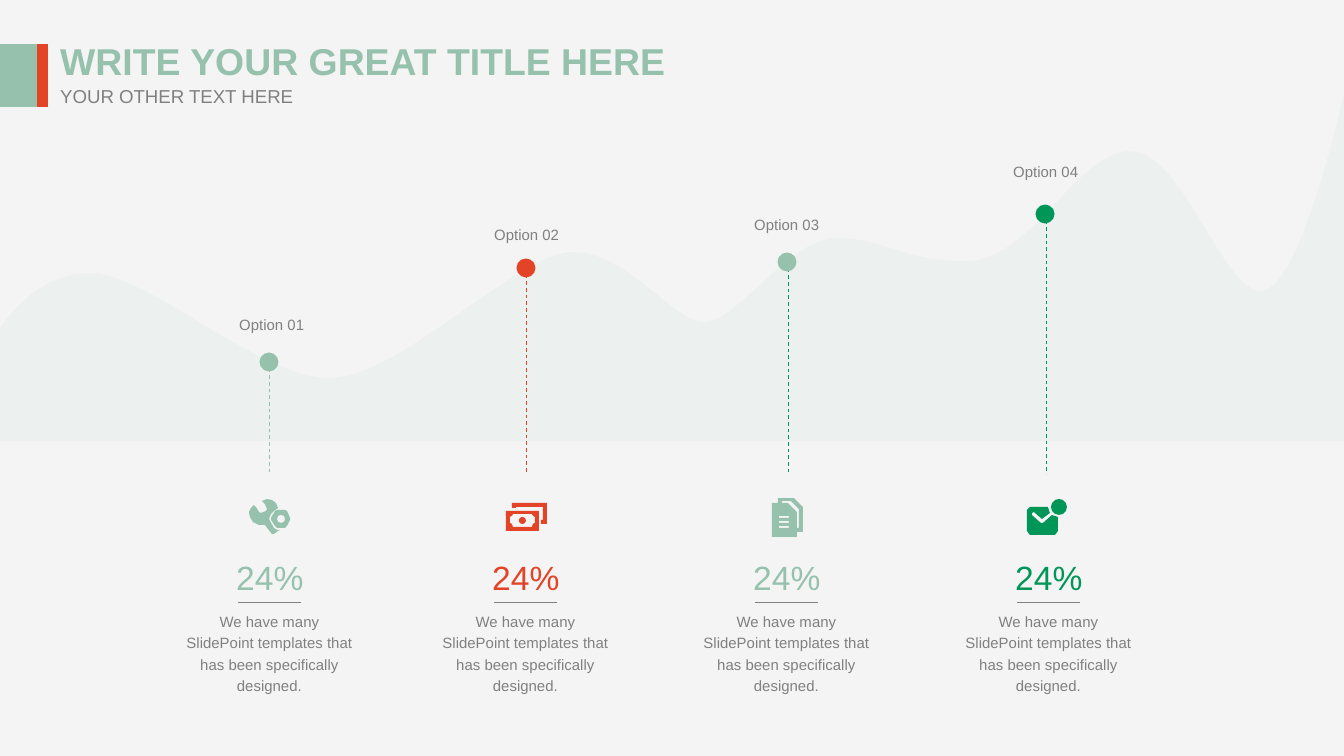
from lxml.etree import SubElement
from pptx import Presentation
from pptx.dml.color import RGBColor
from pptx.enum.dml import MSO_LINE
from pptx.enum.shapes import MSO_CONNECTOR, MSO_SHAPE
from pptx.enum.text import MSO_AUTO_SIZE, PP_ALIGN
from pptx.oxml.ns import qn
from pptx.util import Pt

MINT, RED, GREEN, GRAY, PALE, BACKGROUND = "95C1AD", "E34326", "009658", "808080", "AFD1C2", "F4F4F4"
FONT = "Arial"
WIDTH, HEIGHT = 1344, 756
WAVE_BOTTOM, STEM_BOTTOM, DOT = 441, 474, 19
TITLE, SUBTITLE = "WRITE YOUR GREAT TITLE HERE", "YOUR OTHER TEXT HERE"
COPY = "We have many SlidePoint templates that has been specifically designed."

OPTIONS = [
    {"label": "Option 01", "value": "24%", "color": MINT, "stem": MINT,
     "dot": (269, 362), "label_at": (226, 309), "left": 185},
    {"label": "Option 02", "value": "24%", "color": RED, "stem": RED,
     "dot": (526, 268), "label_at": (481, 219), "left": 441},
    {"label": "Option 03", "value": "24%", "color": MINT, "stem": GREEN,
     "dot": (787, 262), "label_at": (741, 209), "left": 702},
    {"label": "Option 04", "value": "24%", "color": GREEN, "stem": GREEN,
     "dot": (1045, 214), "label_at": (1000, 156), "left": 964},
]

WAVE_START = (0, 328)
WAVE_CURVES = [
    [(0, 328), (34, 273), (90, 273)],
    [(148, 273), (259, 378), (329, 378)],
    [(401, 378), (517, 252), (573, 252)],
    [(628, 252), (673, 322), (704, 322)],
    [(738, 322), (789, 238), (837, 238)],
    [(884, 238), (902, 261), (966, 261)],
    [(1032, 261), (1077, 151), (1130, 151)],
    [(1183, 151), (1222, 291), (1261, 291)],
    [(1301, 291), (1344, 93), (1344, 93)],
]

WRENCH = [(278, 531), (274, 534), (272, 534), (265, 525), (259, 525), (253, 522), (250, 517),
          (249, 512), (251, 508), (254, 505), (256, 507), (259, 512), (261, 513), (266, 511),
          (267, 509), (265, 504), (262, 501), (267, 499), (272, 500), (276, 503), (278, 508),
          (274, 511), (271, 514), (269, 519), (274, 528), (277, 530), (280, 530)]
NUT = [(275, 511), (277, 510), (285, 510), (287, 511), (290, 518), (290, 520), (287, 526),
       (285, 528), (277, 528), (275, 526), (271, 520), (271, 518)]
NUT_HOLE = [(277, 519), (278, 516), (281, 515), (284, 516), (285, 519), (284, 522), (281, 523), (278, 522)]
BACK_NOTE = [(512, 503), (547, 503), (547, 524), (541, 524), (541, 520), (543, 520), (543, 507),
             (516, 507), (516, 508), (512, 508)]
FRONT_NOTE = [(506, 511), (539, 511), (539, 531), (506, 531)]
NOTE_HOLE = [(513, 514), (532, 514), (533, 516), (535, 517), (535, 523), (533, 524), (532, 527),
             (513, 527), (512, 524), (510, 523), (510, 517), (512, 516)]
PAGES = [(778, 498), (794, 498), (803, 507), (803, 532), (797, 532), (797, 537), (772, 537),
         (772, 503), (778, 503)]
PAGE_GAP = [(782, 501), (791, 501), (799, 509), (799, 528), (797, 528), (797, 512), (788, 503), (782, 503)]
PAGE_LINES = [[(779, y), (789, y), (789, y + 2), (779, y + 2)] for y in (516, 521, 526)]
ENVELOPE = [(1052, 515), (1043, 523), (1041, 523), (1032, 515), (1032, 513), (1034, 512), (1042, 519),
            (1050, 513), (1048, 507), (1030, 507), (1027, 510), (1027, 531), (1030, 535),
            (1055, 535), (1058, 531), (1058, 517)]
ICON_OUTLINES = [
    (MINT, [WRENCH]), (MINT, [NUT, NUT_HOLE]),
    (RED, [BACK_NOTE]), (RED, [FRONT_NOTE, NOTE_HOLE]),
    (MINT, [PAGES, PAGE_GAP, *PAGE_LINES]), (GREEN, [ENVELOPE]),
]
ICON_DISCS = [(RED, (519, 517, 7, 7)), (GREEN, (1051, 499, 16, 16))]


def px(length):
    """Turn px into EMU."""
    return round(length * 914400 / 134.4)


def rgb(color):
    """Turn a hex string into a colour."""
    return RGBColor.from_string(color)


def paint(shape, color):
    """Give a shape a plain fill without line or shadow."""
    shape.shadow.inherit = False
    shape.fill.solid()
    shape.fill.fore_color.rgb = rgb(color)
    shape.line.fill.background()
    return shape


def add_solid(slide, kind, box, color):
    """Add a filled preset shape."""
    return paint(slide.shapes.add_shape(kind, *map(px, box)), color)


def add_outline(slide, contours, color):
    """Add a filled freeform whose later contours are holes."""
    builder = None
    for contour in contours:
        first, *rest = [(px(x), px(y)) for x, y in contour]
        if builder is None:
            builder = slide.shapes.build_freeform(*first, scale=1.0)
        else:
            builder.move_to(*first)
        builder.add_line_segments(rest, close=True)
    return paint(builder.convert_to_shape(), color)


def add_line(slide, start, end, color, dash=None):
    """Add a thin straight line."""
    line = slide.shapes.add_connector(MSO_CONNECTOR.STRAIGHT, *map(px, (*start, *end)))
    line.line.color.rgb = rgb(color)
    line.line.width = Pt(0.5)
    if dash:
        line.line.dash_style = dash
    SubElement(line._element.spPr, qn("a:effectLst"))


def add_text(slide, text, box, size, color, bold=False, block=False):
    """Add a one-line label, or a centred wrapping block without insets."""
    frame = slide.shapes.add_textbox(*map(px, box)).text_frame
    frame.word_wrap = block
    frame.auto_size = MSO_AUTO_SIZE.SHAPE_TO_FIT_TEXT
    paragraph = frame.paragraphs[0]
    if block:
        frame.margin_left = frame.margin_right = frame.margin_top = frame.margin_bottom = 0
        paragraph.alignment = PP_ALIGN.CENTER
        paragraph.line_spacing = 1.2
    run = paragraph.add_run()
    run.text = text
    run.font.name, run.font.size, run.font.bold = FONT, Pt(size), bold
    run.font.color.rgb = rgb(color)


def curve_points(start, curves, steps=24):
    """Return points along a chain of cubic curves."""
    points = [start]
    for first, second, end in curves:
        corners = (points[-1], first, second, end)
        for step in range(1, steps + 1):
            t = step / steps
            weights = ((1 - t) ** 3, 3 * t * (1 - t) ** 2, 3 * t * t * (1 - t), t ** 3)
            points.append(tuple(sum(w * c[axis] for w, c in zip(weights, corners)) for axis in (0, 1)))
    return points


def main():
    """Build and save the slide."""
    presentation = Presentation()
    presentation.slide_width, presentation.slide_height = px(WIDTH), px(HEIGHT)
    slide = presentation.slides.add_slide(presentation.slide_layouts[6])
    slide.background.fill.solid()
    slide.background.fill.fore_color.rgb = rgb(BACKGROUND)

    crest = curve_points(WAVE_START, WAVE_CURVES)
    wave = add_outline(slide, [crest + [(WIDTH, WAVE_BOTTOM), (0, WAVE_BOTTOM)]], PALE)
    wave_color = wave._element.spPr.find(qn("a:solidFill"))[0]
    SubElement(wave_color, qn("a:alpha")).set("val", "10000")

    for option in OPTIONS:
        x, y = option["dot"]
        add_line(slide, (x + 1, y), (x + 1, STEM_BOTTOM), option["stem"], MSO_LINE.DASH)
        add_solid(slide, MSO_SHAPE.OVAL, (x - DOT / 2, y - DOT / 2, DOT, DOT), option["color"])
    for color, contours in ICON_OUTLINES:
        add_outline(slide, contours, color)
    for color, box in ICON_DISCS:
        add_solid(slide, MSO_SHAPE.OVAL, box, color)
    for option in OPTIONS:
        left = option["left"]
        add_text(slide, option["label"], (*option["label_at"], 93, 31), 8, GRAY)
        add_text(slide, option["value"], (left + 38, 550, 94, 54), 18, option["color"])
        add_line(slide, (left + 53, 603), (left + 116, 603), GRAY)
        add_text(slide, COPY, (left, 609, 169, 86), 8, GRAY, block=True)

    add_text(slide, TITLE, (47, 32, 636, 58), 20, MINT, bold=True)
    add_text(slide, SUBTITLE, (47, 78, 261, 36), 10, GRAY)
    add_solid(slide, MSO_SHAPE.RECTANGLE, (37, 44, 11, 63), RED)
    add_solid(slide, MSO_SHAPE.RECTANGLE, (0, 44, 37, 63), MINT)
    presentation.save("out.pptx")


if __name__ == "__main__":
    main()
